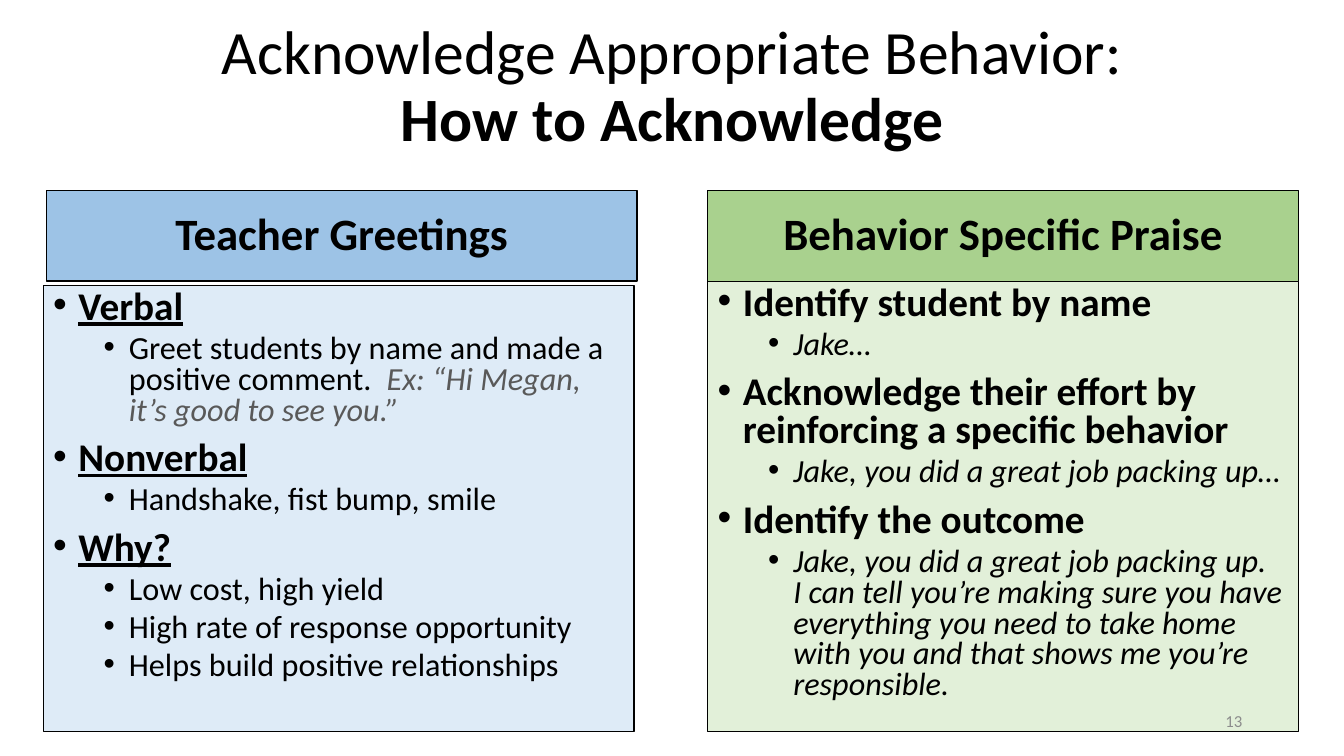
from dataclasses import dataclass

import lxml.etree
import pptx
import pptx.dml.color
import pptx.enum.shapes
import pptx.enum.text
import pptx.oxml.ns
import pptx.util

Inches = pptx.util.Inches
Pt = pptx.util.Pt
RGBColor = pptx.dml.color.RGBColor
Align = pptx.enum.text.PP_ALIGN
Anchor = pptx.enum.text.MSO_ANCHOR

BLACK = RGBColor(0x00, 0x00, 0x00)
GRAY = RGBColor(0x59, 0x59, 0x59)
PALE = RGBColor(0x8C, 0x8C, 0x8C)
BLUE = RGBColor(0x9D, 0xC3, 0xE6)
SKY = RGBColor(0xDE, 0xEB, 0xF7)
GREEN = RGBColor(0xA9, 0xD1, 0x8E)
MINT = RGBColor(0xE2, 0xF0, 0xD9)

FONT = "Calibri"
WIDTH = 5.86
BASE = 7.26


@dataclass(frozen=True)
class Box:
    left: float
    top: float
    height: float
    fill: RGBColor
    line: float = 1


@dataclass(frozen=True)
class Topic:
    name: str
    points: tuple[str, ...]
    quote: str = ""


@dataclass(frozen=True)
class Panel:
    title: str
    head: Box
    body: Box
    topics: tuple[Topic, ...]
    under: bool = False
    slant: bool = False


PANELS = (
    Panel(
        "Teacher Greetings",
        Box(0.46, 1.89, 0.9, BLUE),
        Box(0.43, 2.83, BASE - 2.83, SKY),
        (
            Topic(
                "Verbal",
                ("Greet students by name and made a positive comment.  ",),
                "Ex: “Hi Megan, it’s good to see you.”",
            ),
            Topic("Nonverbal", ("Handshake, fist bump, smile",)),
            Topic(
                "Why?",
                (
                    "Low cost, high yield",
                    "High rate of response opportunity",
                    "Helps build positive relationships",
                ),
            ),
        ),
        under=True,
    ),
    Panel(
        "Behavior Specific Praise",
        Box(7.02, 1.89, 0.9, GREEN, 0.75),
        Box(7.02, 2.79, BASE - 2.79, MINT),
        (
            Topic("Identify student by name", ("Jake…",)),
            Topic(
                "Acknowledge their effort by reinforcing a specific behavior",
                ("Jake, you did a great job packing up…",),
            ),
            Topic(
                "Identify the outcome",
                (
                    "Jake, you did a great job packing up.  I can tell you’re "
                    "making sure you have everything you need to take home "
                    "with you and that shows me you’re responsible.",
                ),
            ),
        ),
        slant=True,
    ),
)


def style(run, size: float, color: RGBColor = BLACK, bold: bool = False,
          slant: bool = False, under: bool = False) -> None:
    font = run.font
    font.name = FONT
    font.size = Pt(size)
    font.color.rgb = color
    font.bold = bold
    font.italic = slant
    font.underline = under


def draw_box(slide, box: Box):
    shape = slide.shapes.add_shape(
        pptx.enum.shapes.MSO_SHAPE.RECTANGLE, Inches(box.left),
        Inches(box.top), Inches(WIDTH), Inches(box.height))
    shape.shadow.inherit = False
    shape.fill.solid()
    shape.fill.fore_color.rgb = box.fill
    shape.line.color.rgb = BLACK
    shape.line.width = Pt(box.line)
    shape.text_frame.word_wrap = True
    return shape.text_frame


def add_text(slide, left: float, top: float, width: float, height: float,
             text: str, align: Align):
    """Add a vertically centred text box and return its paragraph."""
    frame = slide.shapes.add_textbox(
        Inches(left), Inches(top), Inches(width), Inches(height)).text_frame
    frame.word_wrap = True
    frame.vertical_anchor = Anchor.MIDDLE
    frame.text = text
    para = frame.paragraphs[0]
    para.alignment = align
    return para


def add_item(frame, text: str, level: int, first: bool = False):
    """Append a bulleted paragraph; the first one fills the empty start."""
    para = frame.paragraphs[0] if first else frame.add_paragraph()
    para.text = text
    para.level = level
    para.alignment = Align.LEFT
    para.line_spacing = 0.8
    para.space_before = Pt(0 if first else 5 if level else 10)
    props = para._p.get_or_add_pPr()
    props.set("marL", str(Inches(0.25 + 0.5 * level)))
    props.set("indent", str(Inches(-0.25)))
    qn = pptx.oxml.ns.qn
    lxml.etree.SubElement(props, qn("a:buFont"), typeface="Arial")
    lxml.etree.SubElement(props, qn("a:buChar"), char="•")
    return para


def draw_panel(slide, panel: Panel) -> None:
    head = draw_box(slide, panel.head)
    head.vertical_anchor = Anchor.MIDDLE
    head.text = panel.title
    para = head.paragraphs[0]
    para.alignment = Align.CENTER
    para.line_spacing = 0.9
    style(para.runs[0], 32, bold=True)

    body = draw_box(slide, panel.body)
    body.vertical_anchor = Anchor.TOP
    for index, topic in enumerate(panel.topics):
        para = add_item(body, topic.name, 0, index == 0)
        style(para.runs[0], 28, bold=True, under=panel.under)
        for point in topic.points:
            para = add_item(body, point, 1)
            style(para.runs[0], 23, slant=panel.slant)
        if topic.quote:
            run = para.add_run()
            run.text = topic.quote
            style(run, 23, GRAY, slant=True)


def main() -> None:
    deck = pptx.Presentation()
    deck.slide_width = Inches(13.33)
    deck.slide_height = Inches(7.5)
    slide = deck.slides.add_slide(deck.slide_layouts[6])

    title = add_text(
        slide, 0.92, 0.15, 11.5, 1.45,
        "Acknowledge Appropriate Behavior:\vHow to Acknowledge", Align.CENTER)
    title.line_spacing = 0.9
    for run, bold in zip(title.runs, (False, True)):
        style(run, 44, bold=bold)

    for panel in PANELS:
        draw_panel(slide, panel)

    number = add_text(slide, 9.42, 6.95, 3, 0.4, "13", Align.RIGHT)
    style(number.runs[0], 12, PALE)
    deck.save("out.pptx")


if __name__ == "__main__":
    main()
